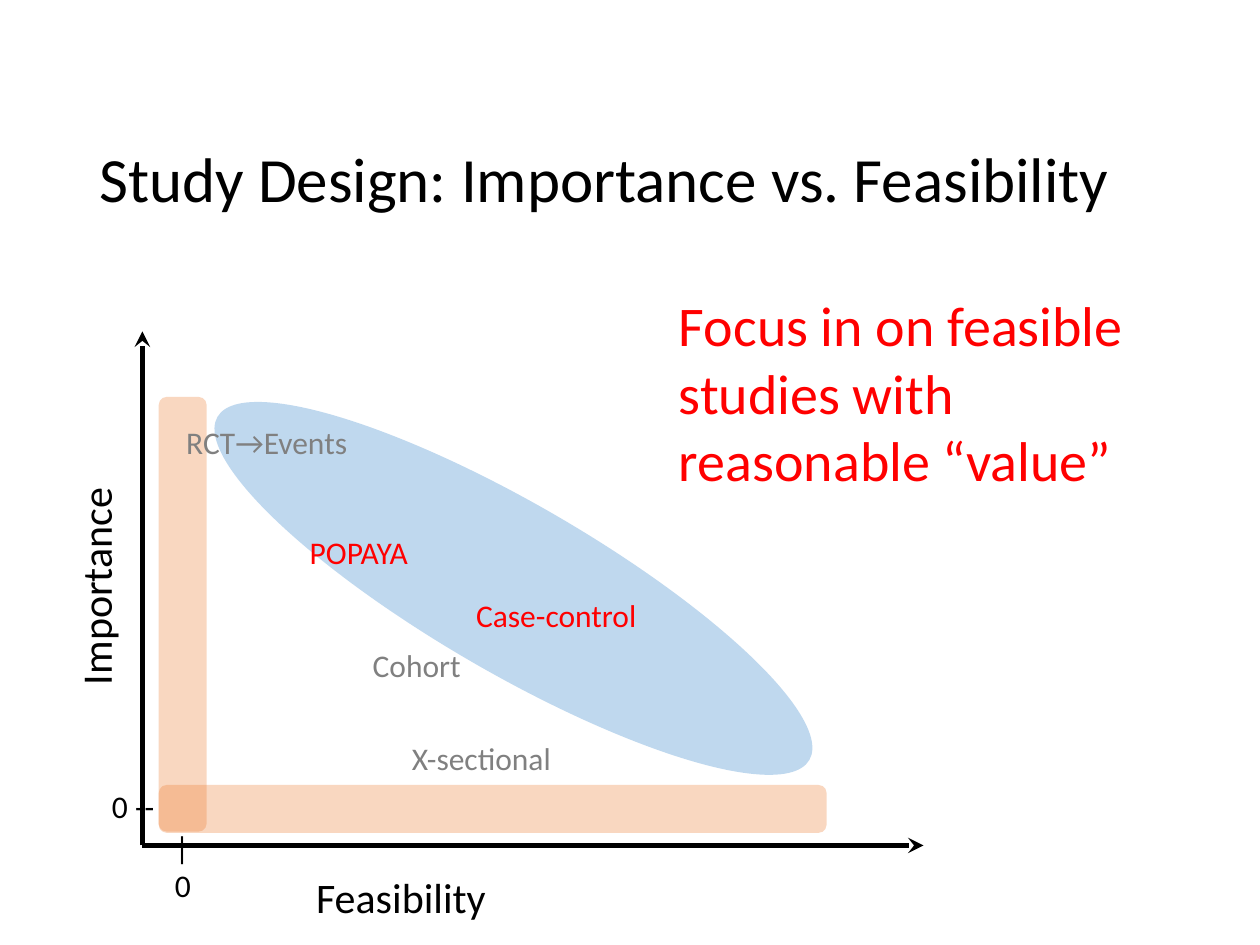
"""Build the study design slide: importance against feasibility."""
from lxml import etree
from pptx import Presentation
from pptx.dml.color import RGBColor
from pptx.enum.shapes import MSO_CONNECTOR, MSO_SHAPE
from pptx.enum.text import MSO_AUTO_SIZE
from pptx.oxml.ns import qn
from pptx.util import Inches, Pt

STRAIGHT = MSO_CONNECTOR.STRAIGHT
ROUNDED = MSO_SHAPE.ROUNDED_RECTANGLE
OVAL = MSO_SHAPE.OVAL
FIT_SHAPE = MSO_AUTO_SIZE.SHAPE_TO_FIT_TEXT
BLACK = RGBColor(0x00, 0x00, 0x00)
RED = RGBColor(0xFF, 0x00, 0x00)
GRAY = RGBColor(0x80, 0x80, 0x80)
ORANGE = RGBColor(0xED, 0x7D, 0x31)
BLUE = RGBColor(0x5B, 0x9B, 0xD5)
FONT = "Calibri"

prs = Presentation()
prs.slide_width, prs.slide_height = Inches(10), Inches(7.5)
slide = prs.slides.add_slide(prs.slide_layouts[6])


def add_label(lines, left, top, width, height, size, color):
    label = slide.shapes.add_textbox(
        Inches(left), Inches(top), Inches(width), Inches(height))
    frame = label.text_frame
    frame.word_wrap = True
    frame.auto_size = FIT_SHAPE
    for index, line in enumerate(lines):
        paragraph = frame.add_paragraph() if index else frame.paragraphs[0]
        run = paragraph.add_run()
        run.text = line
        run.font.name = FONT
        run.font.size = Pt(size)
        run.font.color.rgb = color
    return label


def add_zone(kind, left, top, width, height, rotation, color, opacity):
    zone = slide.shapes.add_shape(
        kind, Inches(left), Inches(top), Inches(width), Inches(height))
    zone.rotation = rotation
    zone.shadow.inherit = False
    zone.line.fill.background()
    zone.fill.solid()
    zone.fill.fore_color.rgb = color
    rgb = zone.fill._xPr.find(qn("a:solidFill"))[0]
    etree.SubElement(rgb, qn("a:alpha"), val=str(opacity * 1000))


title = add_label(["Study Design: Importance vs. Feasibility"],
                  0.69, 1.13, 8.62, 1.19, 36, BLACK)
title.text_frame.auto_size = MSO_AUTO_SIZE.NONE
title.text_frame.paragraphs[0].line_spacing = 0.9

ORIGIN_X, ORIGIN_Y = 1.13, 6.71
for tip_x, tip_y in ((7.33, ORIGIN_Y), (ORIGIN_X, 2.63)):
    axis = slide.shapes.add_connector(
        STRAIGHT, Inches(ORIGIN_X), Inches(ORIGIN_Y), Inches(tip_x), Inches(tip_y))
    axis.line.color.rgb = BLACK
    axis.line.width = Pt(3)
    etree.SubElement(axis.line._get_or_add_ln(), qn("a:tailEnd"), type="stealth")
    etree.SubElement(axis._element.spPr, qn("a:effectLst"))

add_label(["Feasibility"], 2.41, 6.87, 2.15, 0.5, 24, BLACK)
importance = add_label(["Importance"], -0.32, 4.21, 2.15, 0.5, 24, BLACK)
importance.rotation = 270
add_label(["0 --"], 0.79, 6.2, 0.62, 0.4, 18, BLACK)
add_label(["|", "0"], 1.29, 6.52, 0.5, 0.71, 18, BLACK)

add_zone(ROUNDED, 1.26, 3.15, 0.38, 3.45, 0, ORANGE, 30)
add_zone(ROUNDED, 3.72, 3.77, 0.38, 5.3, 90, ORANGE, 30)
add_zone(OVAL, 1.36, 4, 5.43, 1.34, 30.1, BLUE, 39)

add_label(["Focus in on feasible studies with reasonable “value”"],
          5.29, 2.26, 4.4, 1.72, 32, RED)

designs = (
    ("POPAYA", 2.36, 4.18, 1.34, RED),
    ("RCT→Events", 1.38, 3.31, 1.57, GRAY),
    ("Case-control", 3.68, 4.68, 1.62, RED),
    ("Cohort", 2.86, 5.08, 1.4, GRAY),
    ("X-sectional", 3.17, 5.82, 1.4, GRAY),
)
for design, left, top, width, color in designs:
    add_label([design], left, top, width, 0.4, 18, color)

prs.save("out.pptx")
